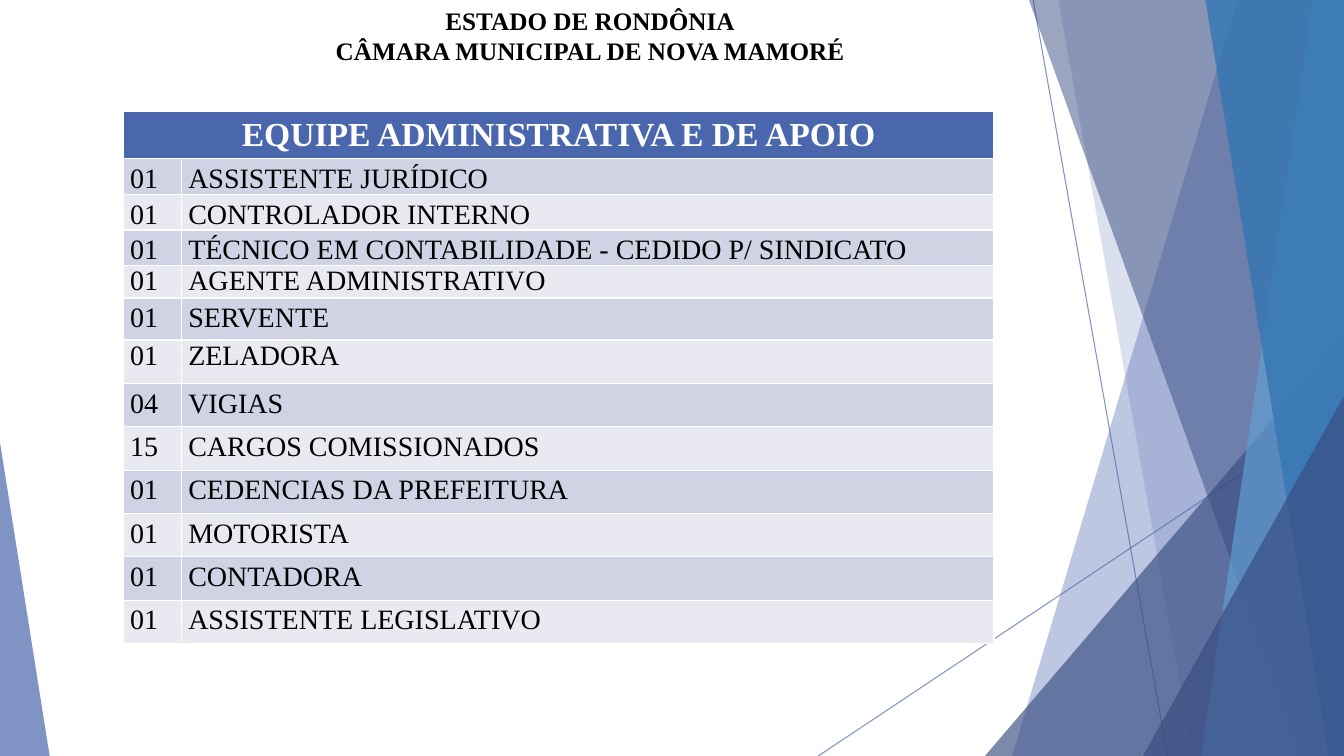
from dataclasses import dataclass

from lxml import etree
from pptx import Presentation
from pptx.dml.color import RGBColor
from pptx.enum.shapes import MSO_CONNECTOR, MSO_SHAPE
from pptx.enum.text import MSO_ANCHOR, MSO_AUTO_SIZE, PP_ALIGN
from pptx.oxml.ns import qn
from pptx.util import Pt

STRAIGHT = MSO_CONNECTOR.STRAIGHT
TRIANGLE = MSO_SHAPE.ISOSCELES_TRIANGLE
MIDDLE = MSO_ANCHOR.MIDDLE
NO_AUTOFIT = MSO_AUTO_SIZE.NONE
CENTER = PP_ALIGN.CENTER
LEFT = PP_ALIGN.LEFT

WIDTH, HEIGHT = 960, 540


@dataclass(frozen=True)
class Theme:
    """Colours, font and type sizes of the slide."""
    blue: str = "4A66AC"
    navy: str = "384C81"
    sky: str = "629DD1"
    ocean: str = "3477B2"
    dark_row: str = "D0D3E3"
    light_row: str = "E9EAF1"
    black: str = "000000"
    white: str = "FFFFFF"
    font: str = "Times New Roman"
    title_size: int = 18
    header_size: int = 24
    body_size: int = 20


THEME = Theme()

STAFF = [
    ("01", "ASSISTENTE JURÍDICO", 24.5, 1.15),
    ("01", "CONTROLADOR INTERNO", 24.5, 1.15),
    ("01", "TÉCNICO EM CONTABILIDADE - CEDIDO P/ SINDICATO", 24.5, 1.15),
    ("01", "AGENTE ADMINISTRATIVO", 23, 1),
    ("01", "SERVENTE", 30, 1.15),
    ("01", "ZELADORA", 31, 1),
    ("04", "VIGIAS", 31, 1.15),
    ("15", "CARGOS COMISSIONADOS", 31, 1.15),
    ("01", "CEDENCIAS DA PREFEITURA", 31, 1.15),
    ("01", "MOTORISTA", 31, 1.15),
    ("01", "CONTADORA", 31, 1.15),
    ("01", "ASSISTENTE LEGISLATIVO", 31, 1.15),
]


def set_alpha(fill, percent):
    """Make a solid fill partly transparent."""
    colour = fill._xPr.find(qn("a:solidFill"))[0]
    etree.SubElement(colour, qn("a:alpha"), val=str(percent * 1000))


def paint(shape, colour, opacity):
    """Give a shape a translucent fill with no line or shadow."""
    shape.fill.solid()
    shape.fill.fore_color.rgb = RGBColor.from_string(colour)
    set_alpha(shape.fill, opacity)
    shape.line.fill.background()
    shape.shadow.inherit = False


def add_ray(slide, start, end):
    """Draw a thin translucent line."""
    ray = slide.shapes.add_connector(STRAIGHT, *map(Pt, start + end))
    ray.line.color.rgb = RGBColor.from_string(THEME.blue)
    ray.line.width = Pt(0.75)
    set_alpha(ray.line.fill, 70)
    etree.SubElement(ray._element.spPr, qn("a:effectLst"))


def add_band(slide, top_x, bottom_x, colour, opacity):
    """Draw a full-height band with a slanted left edge, up to the right edge."""
    outline = slide.shapes.build_freeform(Pt(top_x), 0)
    corners = [(WIDTH, 0), (WIDTH, HEIGHT), (bottom_x, HEIGHT)]
    outline.add_line_segments([(Pt(x), Pt(y)) for x, y in corners], close=True)
    paint(outline.convert_to_shape(), colour, opacity)


def add_wedge(slide, left, top, width, apex, colour, opacity):
    """Draw a right triangle that stands on the bottom edge."""
    wedge = slide.shapes.add_shape(
        TRIANGLE, Pt(left), Pt(top), Pt(width), Pt(HEIGHT - top))
    wedge.adjustments[0] = apex
    paint(wedge, colour, opacity)


def add_facets(slide):
    """Draw the decoration at both sides, from back to front."""
    add_ray(slide, (738, 0), (834, HEIGHT))
    add_ray(slide, (WIDTH, 290), (584.5, HEIGHT))
    add_band(slide, 884, 723, THEME.blue, 36)
    add_band(slide, 756, 852, THEME.blue, 20)
    add_wedge(slide, 703.5, 240, 256.5, 1, THEME.navy, 66)
    add_band(slide, 735, 929.5, THEME.navy, 50)
    add_band(slide, 938, 858, THEME.sky, 70)
    add_band(slide, 861, 949, THEME.ocean, 80)
    add_wedge(slide, 816.5, 283, 143.5, 1, THEME.navy, 66)
    add_wedge(slide, 0, 316, 35.5, 0, THEME.blue, 70)


def format_text(paragraph, size, colour, bold, align):
    """Set the font and alignment of a paragraph."""
    paragraph.alignment = align
    font = paragraph.font
    font.name, font.size, font.bold = THEME.font, Pt(size), bold
    font.color.rgb = RGBColor.from_string(colour)


def fill_title(slide):
    """Write the institution's name in the title placeholder."""
    title = slide.shapes.title
    title.left, title.top, title.width, title.height = map(Pt, (181.5, 0, 480, 51))
    frame = title.text_frame
    frame.text = "ESTADO DE RONDÔNIA\vCÂMARA MUNICIPAL DE NOVA MAMORÉ"
    frame.auto_size = NO_AUTOFIT
    frame.vertical_anchor = MIDDLE
    format_text(frame.paragraphs[0], THEME.title_size, THEME.black, True, CENTER)


def fill_cell(cell, text, fill, size, colour, bold, align):
    """Write one table cell and return its paragraph."""
    cell.text = text
    cell.fill.solid()
    cell.fill.fore_color.rgb = RGBColor.from_string(fill)
    paragraph = cell.text_frame.paragraphs[0]
    format_text(paragraph, size, colour, bold, align)
    return paragraph


def add_staff_table(slide):
    """Build the staff table under its merged header."""
    table = slide.shapes.add_table(
        len(STAFF) + 1, 2, Pt(88), Pt(79.5), Pt(622), Pt(378)).table
    table.columns[0].width, table.columns[1].width = Pt(41.5), Pt(580.5)
    table.rows[0].height = Pt(22)
    header = table.cell(0, 0)
    header.merge(table.cell(0, 1))
    fill_cell(header, "EQUIPE ADMINISTRATIVA E DE APOIO", THEME.blue,
              THEME.header_size, THEME.white, True, CENTER)
    for row, (count, role, height, spacing) in enumerate(STAFF, start=1):
        table.rows[row].height = Pt(height)
        fill = THEME.dark_row if row % 2 else THEME.light_row
        for column, text in enumerate((count, role)):
            cell = table.cell(row, column)
            cell.margin_left = cell.margin_right = Pt(5)
            cell.margin_top = cell.margin_bottom = 0
            paragraph = fill_cell(cell, text, fill, THEME.body_size,
                                  THEME.black, False, LEFT)
            paragraph.line_spacing = spacing


def main():
    """Build and save the slide."""
    deck = Presentation()
    deck.slide_width, deck.slide_height = Pt(WIDTH), Pt(HEIGHT)
    slide = deck.slides.add_slide(deck.slide_layouts[5])
    add_facets(slide)
    add_staff_table(slide)
    fill_title(slide)
    deck.save("out.pptx")


if __name__ == "__main__":
    main()
